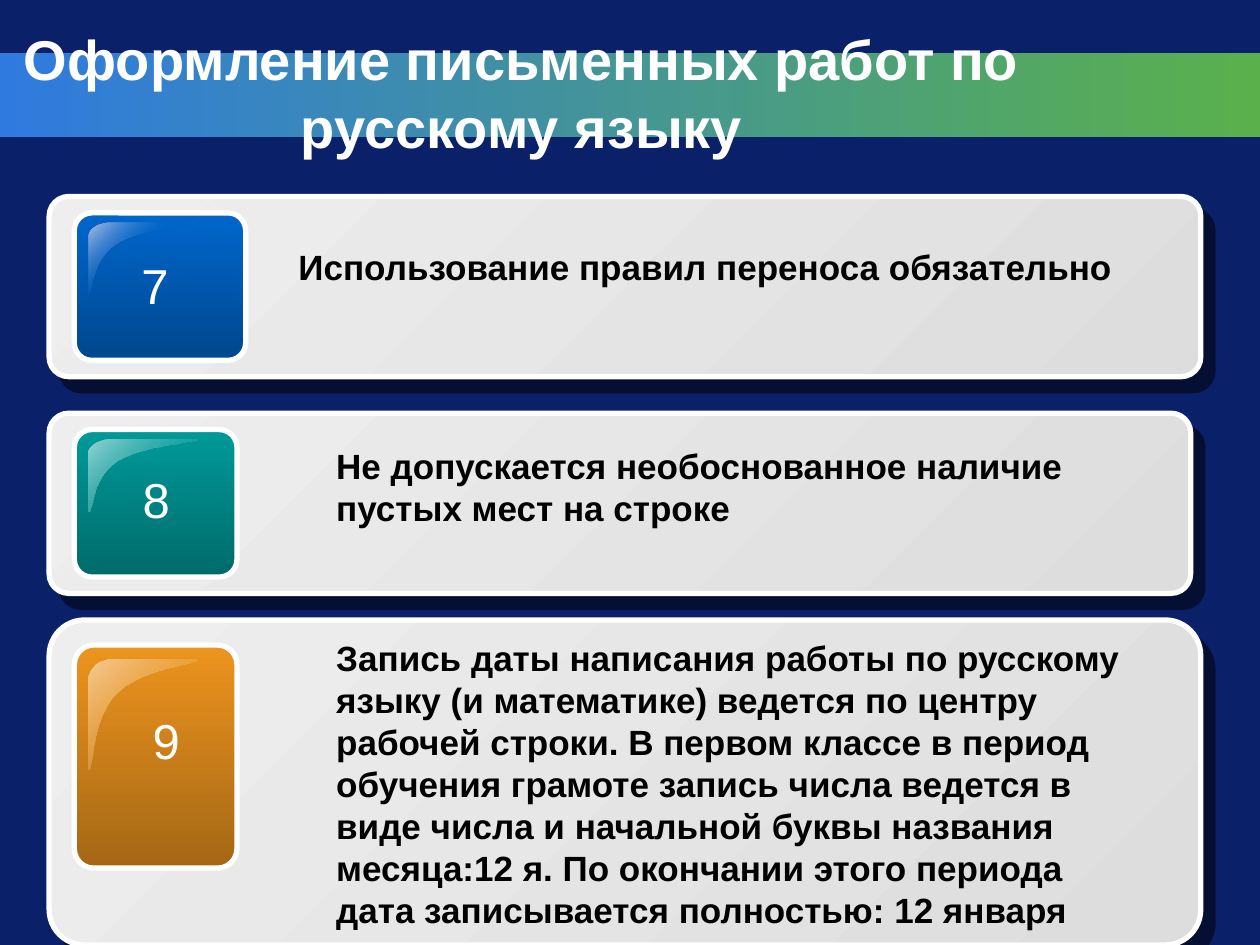
"""Build the slide with rules 7 to 9 for formatting written work in Russian."""
from copy import deepcopy
from dataclasses import dataclass

from lxml import etree
from pptx import Presentation
from pptx import util as u
from pptx.dml.color import RGBColor
from pptx.enum import shapes, text
from pptx.oxml import parse_xml
from pptx.oxml.ns import nsdecls, qn


@dataclass(frozen=True)
class Theme:
    font: str = "Arial"
    background: str = "0A2068"
    white: str = "FFFFFF"
    black: str = "000000"
    band: tuple = ("2F7ADF", "5AB14B")
    card: tuple = ("EEEEEE", "DDDDDD")
    title_size: int = 32
    number_size: int = 28
    rule_size: int = 20
    border: int = 3


THEME = Theme()


def add_text(slide, words, left, top, width, height, *, size, color, bold=False,
             align=text.PP_ALIGN.LEFT, anchor=text.MSO_ANCHOR.TOP, wrap=True):
    label = slide.shapes.add_textbox(*map(u.Inches, (left, top, width, height)))
    frame = label.text_frame
    frame.word_wrap = wrap
    frame.vertical_anchor = anchor
    paragraph = frame.paragraphs[0]
    paragraph.alignment = align
    run = paragraph.add_run()
    run.text = words
    run.font.name = THEME.font
    run.font.size = u.Pt(size)
    run.font.bold = bold
    run.font.color.rgb = RGBColor.from_string(color)


def paint(shape, colors, angle, border=None, clear=None):
    shape.shadow.inherit = False
    shape.fill.gradient()
    shape.fill.gradient_angle = -angle % 360
    stop_list = shape.fill.gradient_stops[0]._gs.getparent()
    for extra in colors[2:]:
        stop_list.append(deepcopy(stop_list[-1]))
    for index, (stop, color) in enumerate(zip(shape.fill.gradient_stops, colors)):
        stop.position = index / (len(colors) - 1)
        stop.color.rgb = RGBColor.from_string(color)
        if index == clear:
            etree.SubElement(stop_list[index][0], qn("a:alpha"), val="0")
    if border:
        shape.line.color.rgb = RGBColor.from_string(border)
        shape.line.width = u.Pt(THEME.border)
    else:
        shape.line.fill.background()


deck = Presentation()
deck.slide_width, deck.slide_height = u.Inches(10), u.Inches(7.5)
slide = deck.slides.add_slide(deck.slide_layouts[6])
slide.background.fill.solid()
slide.background.fill.fore_color.rgb = RGBColor.from_string(THEME.background)

band = slide.shapes.add_shape(
    shapes.MSO_SHAPE.RECTANGLE, 0, u.Inches(0.42), u.Inches(10), u.Inches(0.67))
paint(band, THEME.band, 0)
add_text(slide, "Оформление письменных работ по русскому языку", 0, 0.42, 8.28, 0.62,
         size=THEME.title_size, color=THEME.white, bold=True,
         align=text.PP_ALIGN.CENTER, anchor=text.MSO_ANCHOR.MIDDLE)

gloss_curves = [
    ((0.2, 0), (0.1, 0), (0, 0.08), (0, 0.19)),
    ((0, 0.98), (0.05, 1), (0.02, 0.51), (0.27, 0.29)),
    ((0.27, 0.29), (0.52, 0.07), (1.01, 0.05), (1, 0)),
]
steps = [step / 12 for step in range(13)]
gloss_outline = [
    tuple((1 - t) ** 3 * a + 3 * (1 - t) ** 2 * t * b + 3 * (1 - t) * t ** 2 * c + t ** 3 * d
          for a, b, c, d in zip(*curve))
    for curve in gloss_curves for t in steps
]

rules = [
    dict(number="7", card=(1.56, 9.14, 1.43), tile=(1.69, 1.36, 1.17),
         colors=("0066CC", "00478E"), gloss=("B5C0E5", "0066CC", "B5C0E5"),
         number_at=(1.02, 1.98), words_at=(2.27, 1.9, 7.05, 0.44),
         words="Использование правил переноса обязательно"),
    dict(number="8", card=(3.28, 9.06, 1.43), tile=(3.41, 1.29, 1.17),
         colors=("009999", "006B6B"), gloss=("93D4D4", "009999"),
         number_at=(1.03, 3.68), words_at=(2.57, 3.48, 6.66, 0.77),
         words="Не допускается необоснованное наличие пустых мест на строке"),
    dict(number="9", card=(4.92, 9.14, 2.58), tile=(5.12, 1.29, 1.77),
         colors=("EC941E", "A56715"), gloss=("F6CB92", "EC941E"),
         number_at=(1.11, 5.59), words_at=(2.57, 5, 6.66, 2.46),
         words="Запись даты написания работы по русскому языку (и математике) ведется "
               "по центру рабочей строки. В первом классе в период обучения грамоте "
               "запись числа ведется в виде числа и начальной буквы названия "
               "месяца:12 я. По окончании этого периода дата записывается полностью: "
               "12 января"),
]

for rule in rules:
    panels = [(0.39, rule["card"], 0.109, THEME.card, 45),
              (0.59, rule["tile"], 0.119, rule["colors"], 90)]
    for left, (top, width, height), rounding, colors, angle in panels:
        panel = slide.shapes.add_shape(
            shapes.MSO_SHAPE.ROUNDED_RECTANGLE, *map(u.Inches, (left, top, width, height)))
        panel.adjustments[0] = rounding
        paint(panel, colors, angle, border=THEME.white)
        if colors == THEME.card:
            panel._element.spPr.find(qn("a:effectLst")).append(parse_xml(
                f'<a:outerShdw {nsdecls("a")} blurRad="0" dist="{u.Pt(10.6)}" '
                f'dir="{49 * 60000}" algn="ctr" rotWithShape="0">'
                f'<a:srgbClr val="{THEME.black}"><a:alpha val="50000"/></a:srgbClr>'
                '</a:outerShdw>'))

    tile_top, _, tile_height = rule["tile"]
    points = [(u.Inches(0.7 + 0.87 * x),
               u.Inches(tile_top + tile_height / 15 + tile_height / 2 * y))
              for x, y in gloss_outline]
    builder = slide.shapes.build_freeform(*points[0])
    builder.add_line_segments(points[1:], close=True)
    paint(builder.convert_to_shape(), rule["gloss"], 45, clear=1)

    add_text(slide, rule["number"], *rule["number_at"], 0.42, 0.57, size=THEME.number_size,
             color=THEME.white, align=text.PP_ALIGN.CENTER, wrap=False)
    add_text(slide, rule["words"], *rule["words_at"], size=THEME.rule_size,
             color=THEME.black, bold=True)

deck.save("out.pptx")
